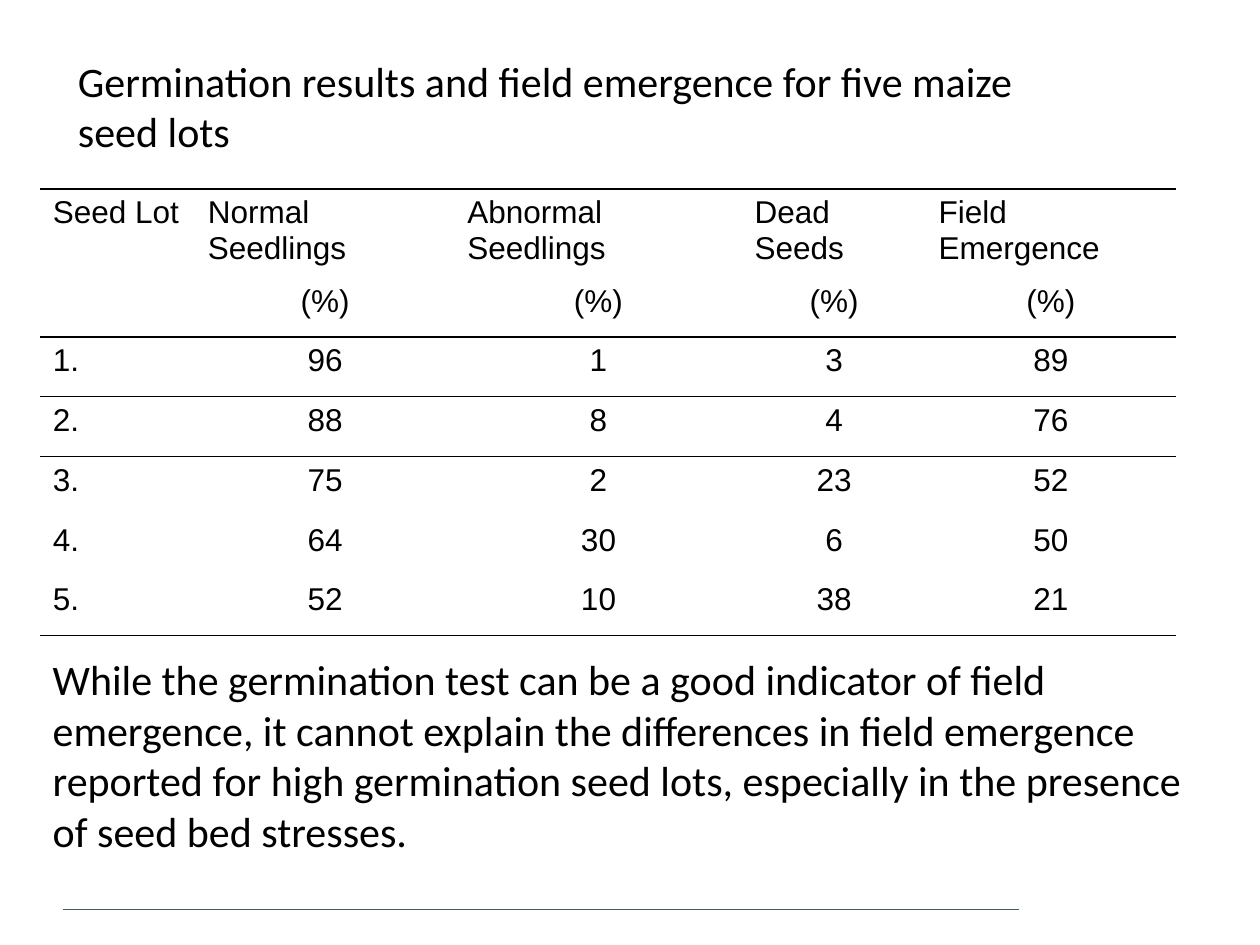
from lxml import etree
from pptx import Presentation
from pptx.dml.color import RGBColor
from pptx.enum.shapes import MSO_CONNECTOR
from pptx.enum.text import MSO_AUTO_SIZE, PP_ALIGN
from pptx.oxml.ns import qn
from pptx.util import Inches, Pt

BLACK = RGBColor(0x00, 0x00, 0x00)
TEAL = RGBColor(0x42, 0x5E, 0x5B)
LEFT, CENTER = PP_ALIGN.LEFT, PP_ALIGN.CENTER
STRAIGHT = MSO_CONNECTOR.STRAIGHT
GROW = MSO_AUTO_SIZE.SHAPE_TO_FIT_TEXT
NO_GRID = "{2D5ABB26-0587-4C30-8999-92F81FD0307C}"

TITLE = "Germination results and field emergence for five maize seed lots"
NOTE = (
    "While the germination test can be a good indicator of field emergence, "
    "it cannot explain the differences in field emergence reported for high "
    "germination seed lots, especially in the presence of seed bed stresses."
)
ROWS = [
    ["Seed Lot", "Normal Seedlings", "Abnormal Seedlings", "Dead Seeds",
     "Field Emergence"],
    ["", "(%)", "(%)", "(%)", "(%)"],
    ["1.", "96", "1", "3", "89"],
    ["2.", "88", "8", "4", "76"],
    ["3.", "75", "2", "23", "52"],
    ["4.", "64", "30", "6", "50"],
    ["5.", "52", "10", "38", "21"],
]
WIDTHS = [1.23, 2.06, 2.28, 1.46, 1.98]
# Row number -> sides that carry a rule
RULES = {0: ["lnT"], 1: ["lnB"], 2: ["lnT", "lnB"], 3: ["lnT"], 6: ["lnB"]}


def put_text(frame, text, font="Calibri", size=24, color=BLACK, align=LEFT):
    para = frame.paragraphs[0]
    para.text = text
    para.alignment = align
    para.font.name = font
    para.font.size = Pt(size)
    para.font.color.rgb = color


def add_text(slide, text, left, top, width, height):
    box = slide.shapes.add_textbox(
        Inches(left), Inches(top), Inches(width), Inches(height))
    box.text_frame.word_wrap = True
    box.text_frame.auto_size = GROW
    put_text(box.text_frame, text)


def add_rule(cell, side):
    props = cell._tc.get_or_add_tcPr()
    line = etree.SubElement(props, qn("a:" + side), w=str(Pt(1)))
    fill = etree.SubElement(line, qn("a:solidFill"))
    etree.SubElement(fill, qn("a:srgbClr"), val=str(BLACK))


def add_grid(slide):
    frame = slide.shapes.add_table(
        len(ROWS), len(WIDTHS), Inches(0.32), Inches(1.5),
        Inches(sum(WIDTHS)), Inches(3.32))
    table = frame.table
    table.first_row = table.horz_banding = False
    table._tbl.tblPr.find(qn("a:tableStyleId")).text = NO_GRID
    for col, width in zip(table.columns, WIDTHS):
        col.width = Inches(width)
    for r, row in enumerate(ROWS):
        for c, text in enumerate(row):
            cell = table.cell(r, c)
            align = CENTER if r and c else LEFT
            put_text(cell.text_frame, text, font="Arial", size=18, align=align)
            for side in RULES.get(r, []):
                add_rule(cell, side)
            cell.fill.background()


def add_line(slide, left, right, top):
    line = slide.shapes.add_connector(
        STRAIGHT, Inches(right), Inches(top), Inches(left), Inches(top))
    line.line.color.rgb = TEAL
    line.line.width = Pt(0.25)
    etree.SubElement(line._element.spPr, qn("a:effectLst"))


def main():
    deck = Presentation()
    deck.slide_width, deck.slide_height = Inches(10), Inches(7.5)
    slide = deck.slides.add_slide(deck.slide_layouts[6])

    # Footer line
    add_line(slide, 0.5, 8.09, 7.22)
    # Title and closing remark
    add_text(slide, TITLE, 0.52, 0.39, 8.29, 0.91)
    add_text(slide, NOTE, 0.32, 5.14, 9.3, 1.72)
    # Seed lot results
    add_grid(slide)

    deck.save("out.pptx")


if __name__ == "__main__":
    main()
